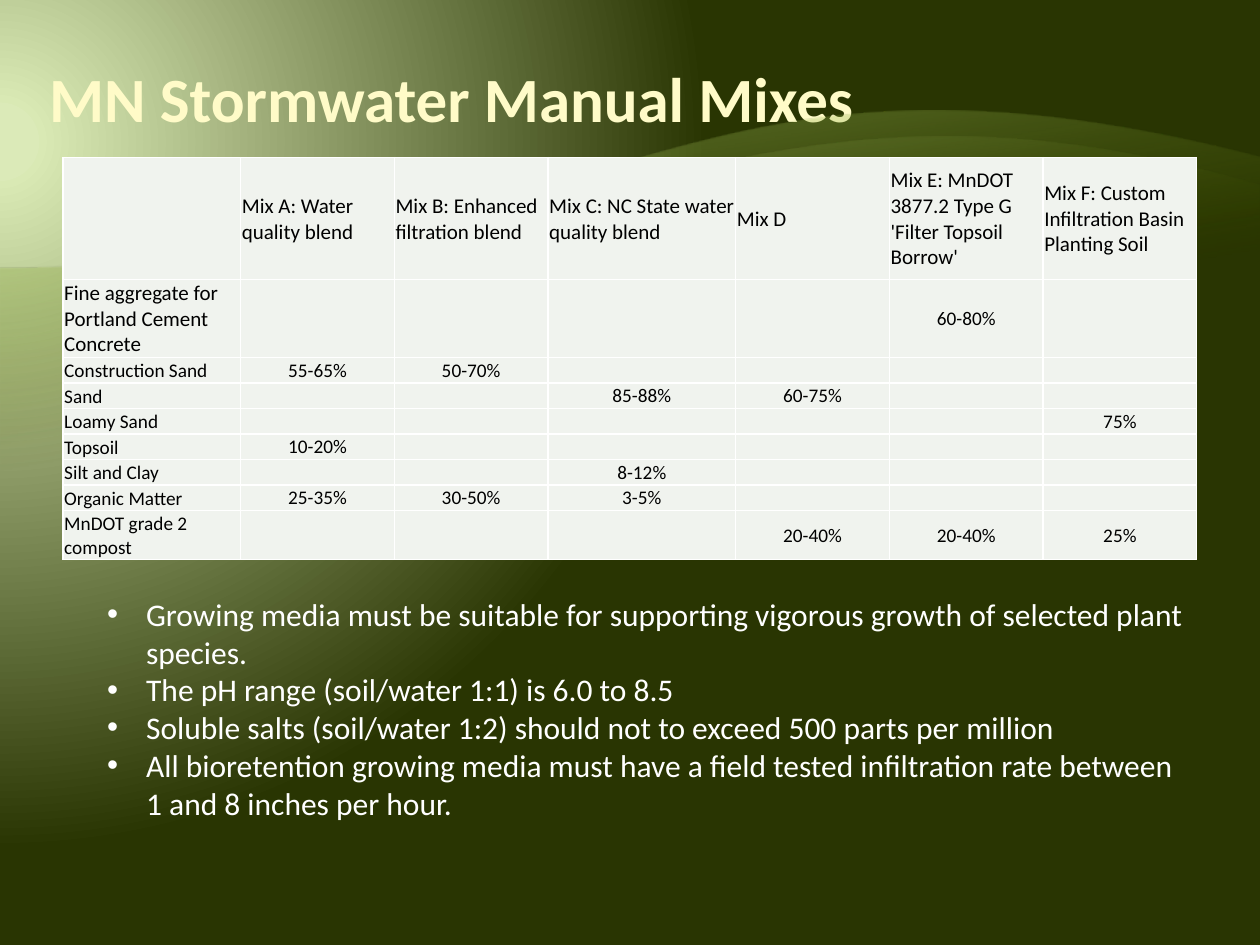
import pptx
import pptx.dml.color
import pptx.enum.text
import pptx.oxml
import pptx.oxml.ns
import pptx.util
from dataclasses import dataclass
from lxml import etree

In, Pt = pptx.util.Inches, pptx.util.Pt
Align = pptx.enum.text.PP_ALIGN
Anchor = pptx.enum.text.MSO_ANCHOR
qn = pptx.oxml.ns.qn
SPACE = pptx.oxml.ns.nsdecls("a", "p")


@dataclass
class Theme:
    font: str = "Calibri"
    head: str = "FFFBC8"
    body: str = "FFFFFF"
    cell: str = "F0F3EE"
    ink: str = "000000"
    rule: str = "FFFFFF"
    back: tuple = ((5, "DBEAB8", 100), (5, "D9E9B4", 100), (90, "293502", 100))
    hill: tuple = ((65, "587300", 0), (100, "C8E38D", 55))
    ridge: tuple = ((65, "587300", 0), (100, "D9EBB2", 30))
    big: int = 36
    list: int = 18
    label: int = 12
    small: int = 11


class Page:
    COLS, ROWS = 40, 30

    def __init__(self, theme):
        self.theme = theme
        self.deck = pptx.Presentation()
        self.deck.slide_width, self.deck.slide_height = In(10), In(7.5)
        self.slide = self.deck.slides.add_slide(self.deck.slide_layouts[1])

    def x(self, col):
        return round(self.deck.slide_width * col / self.COLS)

    def y(self, row):
        return round(self.deck.slide_height * row / self.ROWS)

    def place(self, shape, col, row, wide, high):
        shape.left, shape.top = self.x(col), self.y(row)
        shape.width, shape.height = self.x(wide), self.y(high)

    def style(self, par, size, color, bold=False):
        for run in par.runs:
            font = run.font
            font.name, font.size, font.bold = self.theme.font, Pt(size), bold
            font.color.rgb = pptx.dml.color.RGBColor.from_string(color)

    def blend(self, stops, shade):
        marks = "".join(
            f'<a:gs pos="{pos * 1000}"><a:srgbClr val="{color}">'
            f'<a:alpha val="{alpha * 1000}"/></a:srgbClr></a:gs>'
            for pos, color, alpha in stops)
        return f'<a:gradFill {SPACE} rotWithShape="1"><a:gsLst>{marks}</a:gsLst>{shade}</a:gradFill>'

    def back(self):
        fill = self.blend(
            self.theme.back,
            '<a:path path="circle"><a:fillToRect l="20000" t="30000" r="135000" b="100000"/></a:path>')
        xml = f"<p:bg {SPACE}><p:bgPr>{fill}<a:effectLst/></p:bgPr></p:bg>"
        self.slide.element.cSld.insert(0, pptx.oxml.parse_xml(xml))

    def wave(self, curve, base, stops, steps=60):
        points = []
        for step in range(steps + 1):
            t = step / steps
            parts = ((1 - t) ** 3, 3 * t * (1 - t) ** 2, 3 * t * t * (1 - t), t ** 3)
            points.append((self.x(sum(p * c[0] for p, c in zip(parts, curve))),
                           self.y(sum(p * c[1] for p, c in zip(parts, curve)))))
        pen = self.slide.shapes.build_freeform(0, self.y(base))
        pen.add_line_segments(points + [(self.x(self.COLS), self.y(base))], close=True)
        shape = pen.convert_to_shape()
        shape.shadow.inherit = False
        shape.line.fill.background()
        shape.fill.solid()
        props = shape.element.spPr
        fill = self.blend(stops, '<a:lin ang="15600000" scaled="0"/>')
        props.replace(props.find(qn("a:solidFill")), pptx.oxml.parse_xml(fill))

    def title(self, text, *box):
        shape = self.slide.shapes.title
        self.place(shape, *box)
        frame = shape.text_frame
        frame.text = text
        frame.auto_size = pptx.enum.text.MSO_AUTO_SIZE.NONE
        frame.vertical_anchor = Anchor.BOTTOM
        frame.margin_left = frame.margin_right = 0
        frame.margin_top = frame.margin_bottom = In(0.01)
        par = frame.paragraphs[0]
        par.alignment = Align.LEFT
        self.style(par, self.theme.big, self.theme.head, True)

    def bullets(self, lines, *box):
        shape = self.slide.placeholders[1]
        self.place(shape, *box)
        frame = shape.text_frame
        frame.text = "\n".join(lines)
        frame.auto_size = pptx.enum.text.MSO_AUTO_SIZE.NONE
        for par in frame.paragraphs:
            props = par._p.get_or_add_pPr()
            props.set("marL", str(In(0.31)))
            props.set("indent", str(-In(0.31)))
            etree.SubElement(props, qn("a:buChar"), char="•")
            par.space_before = Pt(0)
            self.style(par, self.theme.list, self.theme.body)

    def cell(self, cell, text, size, align, anchor):
        cell.margin_left = cell.margin_right = cell.margin_top = In(0.01)
        cell.margin_bottom = 0
        cell.vertical_anchor = anchor
        for side in ("lnL", "lnR", "lnT", "lnB"):
            line = etree.SubElement(cell._tc.get_or_add_tcPr(), qn("a:" + side), w=str(Pt(1)))
            fill = etree.SubElement(line, qn("a:solidFill"))
            etree.SubElement(fill, qn("a:srgbClr"), val=self.theme.rule)
        cell.fill.solid()
        cell.fill.fore_color.rgb = pptx.dml.color.RGBColor.from_string(self.theme.cell)
        par = cell.text_frame.paragraphs[0]
        par.alignment = align
        if text:
            par.text = text
            self.style(par, size, self.theme.ink)
        else:
            etree.SubElement(par._p, qn("a:endParaRPr"), sz=str(size * 100))

    def table(self, rows, wides, highs, *box):
        spot = (self.x(box[0]), self.y(box[1]), self.x(sum(wides)), self.y(sum(highs)))
        grid = self.slide.shapes.add_table(len(rows), len(wides), *spot).table
        grid.first_row = grid.horz_banding = False
        for col, wide in zip(grid.columns, wides):
            col.width = self.x(wide)
        for row, high in zip(grid.rows, highs):
            row.height = self.y(high)
        for r, row in enumerate(rows):
            for c, text in enumerate(row):
                label = r == 0 or (r == 1 and c == 0)
                size = self.theme.label if label else self.theme.small
                align = Align.LEFT if r == 0 or c == 0 else Align.CENTER
                anchor = Anchor.BOTTOM if c == 0 and r > 1 else Anchor.MIDDLE
                self.cell(grid.cell(r, c), text, size, align, anchor)


HEADS = ["", "Mix A: Water quality blend", "Mix B: Enhanced filtration blend",
         "Mix C: NC State water quality blend", "Mix D",
         "Mix E: MnDOT 3877.2 Type G 'Filter Topsoil Borrow'",
         "Mix F: Custom Infiltration Basin Planting Soil"]
MIXES = {
    "Fine aggregate for Portland Cement Concrete": {"E": "60-80%"},
    "Construction Sand": {"A": "55-65%", "B": "50-70%"},
    "Sand": {"C": "85-88%", "D": "60-75%"},
    "Loamy Sand": {"F": "75%"},
    "Topsoil": {"A": "10-20%"},
    "Silt and Clay": {"C": "8-12%"},
    "Organic Matter": {"A": "25-35%", "B": "30-50%", "C": "3-5%"},
    "MnDOT grade 2 compost": {"D": "20-40%", "E": "20-40%", "F": "25%"},
}
NOTES = [
    "Growing media must be suitable for supporting vigorous growth of selected plant species.",
    "The pH range (soil/water 1:1) is 6.0 to 8.5",
    "Soluble salts (soil/water 1:2) should not to exceed 500 parts per million",
    "All bioretention growing media must have a field tested infiltration rate between 1 and 8 inches per hour.",
]


def main():
    theme = Theme()
    page = Page(theme)
    page.back()
    page.wave([(0, 8.52), (20, 8.52), (21.36, 0.2), (40, 5)], 29.32, theme.hill)
    page.wave([(0, 8.52), (20, 8.52), (23.92, 1.24), (40, 5.88)], 25.48, theme.ridge)
    rows = [HEADS] + [[name] + [parts.get(mix, "") for mix in "ABCDEF"]
                      for name, parts in MIXES.items()]
    wides = [5.64, 4.88, 4.88, 5.96] + [4.88] * 3
    highs = [3.87, 2.47] + [0.81] * 6 + [1.44]
    page.table(rows, wides, highs, 2, 5)
    page.title("MN Stormwater Manual Mixes", 1.56, 1, 38.32, 3.32)
    page.bullets(NOTES, 3, 18.68, 35, 7.68)
    page.deck.save("out.pptx")


if __name__ == "__main__":
    main()
